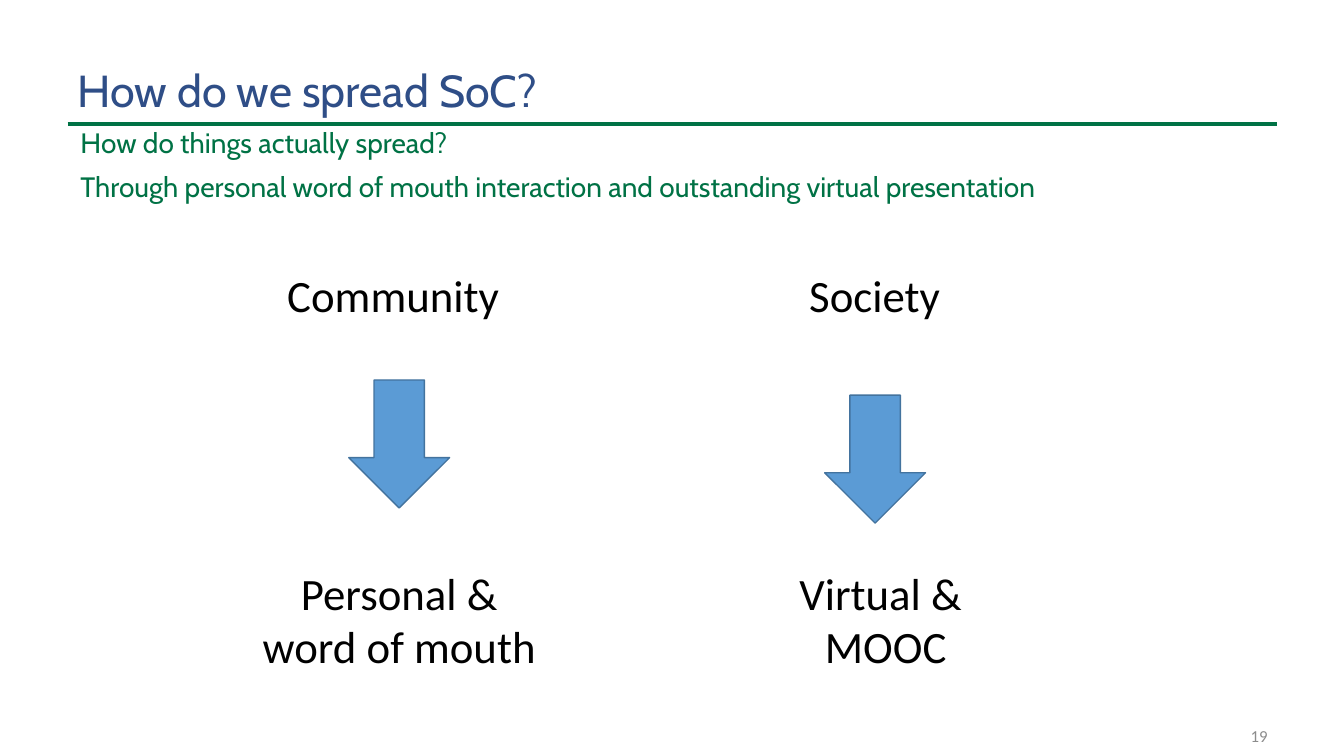
from lxml import etree
from pptx import Presentation
from pptx.dml.color import RGBColor
from pptx.enum import shapes, text
from pptx.oxml import ns
from pptx.util import Inches, Pt

BLUE = RGBColor(0x2F, 0x4E, 0x87)
GREEN = RGBColor(0x00, 0x72, 0x45)
BLACK = RGBColor(0, 0, 0)
GREY = RGBColor(0x8C, 0x8C, 0x8C)
ARROW_FILL = RGBColor(0x5B, 0x9B, 0xD5)
ARROW_LINE = RGBColor(0x43, 0x73, 0x9E)

LEFT, CENTER, RIGHT = text.PP_ALIGN.LEFT, text.PP_ALIGN.CENTER, text.PP_ALIGN.RIGHT
TOP, MIDDLE = text.MSO_ANCHOR.TOP, text.MSO_ANCHOR.MIDDLE

TITLE = "How do we spread SoC?"
ANSWERS = [
    "How do things actually spread?",
    "Through personal word of mouth interaction and outstanding virtual presentation",
]
PAGE_NUMBER = "19"
HEAD_TOP, HEAD_HEIGHT = 2.61, 0.64
CHANNEL_TOP, CHANNEL_HEIGHT = 5.56, 1.18
ARROW_WIDTH, ARROW_HEIGHT = 1, 1.27
COLUMNS = [
    {"head": "Community", "head_span": (2.75, 2.42), "align": LEFT, "arrow": (3.46, 3.77),
     "channel": ["Personal & word of mouth"], "channel_span": (2.4, 3.12)},
    {"head": "Society", "head_span": (7.08, 3.19), "align": CENTER, "arrow": (8.18, 3.92),
     "channel": ["Virtual & ", "MOOC"], "channel_span": (7.08, 3.41)},
]


def add_text(page, place, lines, size, color, font="Calibri", align=LEFT,
             anchor=TOP, line_spacing=1.0, gap=0):
    box = page.shapes.add_textbox(*map(Inches, place))
    frame = box.text_frame
    frame.word_wrap = True
    frame.vertical_anchor = anchor
    for index, line in enumerate(lines):
        para = frame.paragraphs[0] if index == 0 else frame.add_paragraph()
        para.alignment = align
        para.line_spacing = line_spacing
        if index:
            para.space_before = Pt(gap)
        span = para.add_run()
        span.text = line
        span.font.name = font
        span.font.size = Pt(size)
        span.font.color.rgb = color


def add_rule(page):
    rule = page.shapes.add_connector(
        shapes.MSO_CONNECTOR.STRAIGHT, Inches(0.67), Inches(1.23), Inches(12.67), Inches(1.23))
    rule.line.color.rgb = GREEN
    rule.line.width = Pt(2.25)
    etree.SubElement(rule._element.spPr, ns.qn("a:effectLst"))


def add_arrow(page, left, top):
    arrow = page.shapes.add_shape(
        shapes.MSO_SHAPE.DOWN_ARROW, Inches(left), Inches(top),
        Inches(ARROW_WIDTH), Inches(ARROW_HEIGHT))
    arrow.shadow.inherit = False
    arrow.fill.solid()
    arrow.fill.fore_color.rgb = ARROW_FILL
    arrow.line.color.rgb = ARROW_LINE
    arrow.line.width = Pt(1)


def main():
    deck = Presentation()
    deck.slide_width, deck.slide_height = Inches(13.33), Inches(7.5)
    page = deck.slides.add_slide(deck.slide_layouts[6])

    add_rule(page)
    add_text(page, (9.56, 7.1, 3.11, 0.4), [PAGE_NUMBER], 12, GREY, align=RIGHT, anchor=MIDDLE)
    add_text(page, (0.67, 0.61, 10.92, 0.62), [TITLE], 32, BLUE, "Cabin",
             anchor=MIDDLE, line_spacing=0.9)
    add_text(page, (0.7, 1.23, 11.96, 0.77), ANSWERS, 20, GREEN, "Cabin",
             line_spacing=0.9, gap=10)

    for column in COLUMNS:
        left, width = column["head_span"]
        add_text(page, (left, HEAD_TOP, width, HEAD_HEIGHT), [column["head"]], 32, BLACK,
                 align=column["align"])
        add_arrow(page, *column["arrow"])
        left, width = column["channel_span"]
        add_text(page, (left, CHANNEL_TOP, width, CHANNEL_HEIGHT), column["channel"], 32, BLACK,
                 align=CENTER)

    deck.save("out.pptx")


if __name__ == "__main__":
    main()
